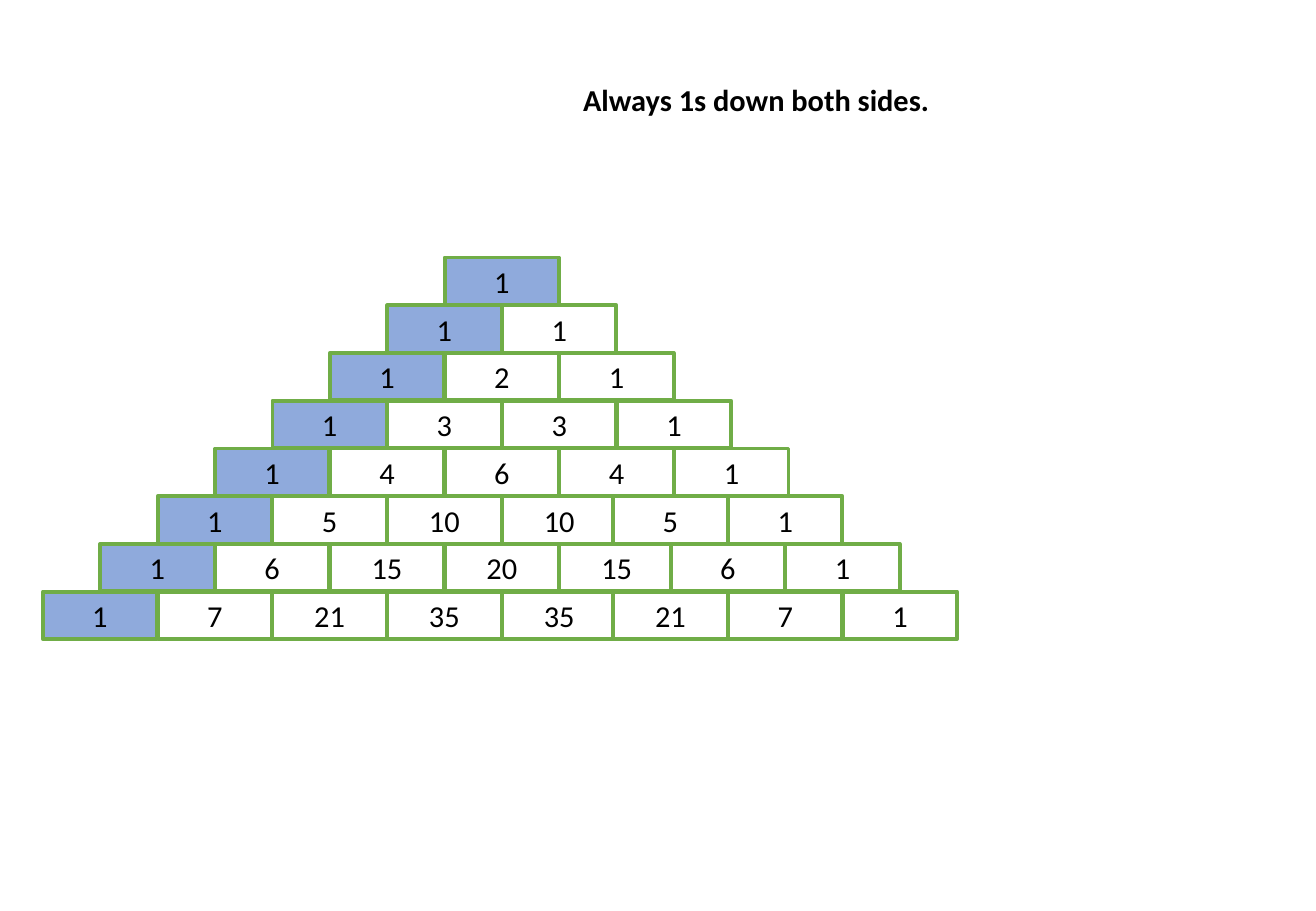
from math import comb

from pptx import Presentation
from pptx.dml.color import RGBColor
from pptx.enum.shapes import MSO_SHAPE
from pptx.enum.text import MSO_ANCHOR, MSO_AUTO_SIZE, PP_ALIGN
from pptx.util import Inches, Pt

RECTANGLE = MSO_SHAPE.RECTANGLE
MIDDLE = MSO_ANCHOR.MIDDLE
CENTER = PP_ALIGN.CENTER
FIT_SHAPE = MSO_AUTO_SIZE.SHAPE_TO_FIT_TEXT

COLORS = {"edge": "8FAADC", "inside": "FFFFFF", "border": "70AD47", "text": "000000"}
FONT = "Calibri"
BLANK_LAYOUT = 6

ROWS = 8
APEX_LEFT, APEX_TOP = 3.66, 2.12
COLUMN_PITCH, ROW_PITCH = 0.945, 0.393
CELL_WIDTH, CELL_HEIGHT = 0.94, 0.39
SHIFT = 0.03
FIRST_SHIFTED_COLUMN = {5: 4, 6: 5, 7: 5}


def color(name):
    return RGBColor.from_string(COLORS[name])


def format_text(paragraph, text, bold=False):
    paragraph.text = text
    paragraph.font.name = FONT
    paragraph.font.size = Pt(18)
    paragraph.font.bold = bold
    paragraph.font.color.rgb = color("text")


def add_heading(slide, text):
    box = slide.shapes.add_textbox(Inches(4.7), Inches(0.62), Inches(5.42), Inches(0.4))
    box.text_frame.word_wrap = True
    box.text_frame.auto_size = FIT_SHAPE
    format_text(box.text_frame.paragraphs[0], text, bold=True)


def add_cell(slide, left, top, text, fill):
    cell = slide.shapes.add_shape(
        RECTANGLE, Inches(left), Inches(top), Inches(CELL_WIDTH), Inches(CELL_HEIGHT)
    )
    cell.shadow.inherit = False
    if fill:
        cell.fill.solid()
        cell.fill.fore_color.rgb = color(fill)
    else:
        cell.fill.background()
    cell.line.color.rgb = color("border")
    cell.line.width = Pt(2.25)
    cell.text_frame.vertical_anchor = MIDDLE
    paragraph = cell.text_frame.paragraphs[0]
    paragraph.alignment = CENTER
    format_text(paragraph, text)


def cell_fill(row, column):
    if column == 0:
        return "edge"
    return None if column == row else "inside"


def add_triangle(slide):
    for row in range(ROWS):
        for column in range(row + 1):
            left = APEX_LEFT + (column - row / 2) * COLUMN_PITCH
            if column >= FIRST_SHIFTED_COLUMN.get(row, ROWS):
                left -= SHIFT
            top = APEX_TOP + row * ROW_PITCH
            add_cell(slide, left, top, str(comb(row, column)), cell_fill(row, column))


def main():
    presentation = Presentation()
    presentation.slide_width = Inches(10.83)
    presentation.slide_height = Inches(7.5)
    slide = presentation.slides.add_slide(presentation.slide_layouts[BLANK_LAYOUT])
    add_triangle(slide)
    add_heading(slide, "Always 1s down both sides.")
    presentation.save("out.pptx")


if __name__ == "__main__":
    main()
